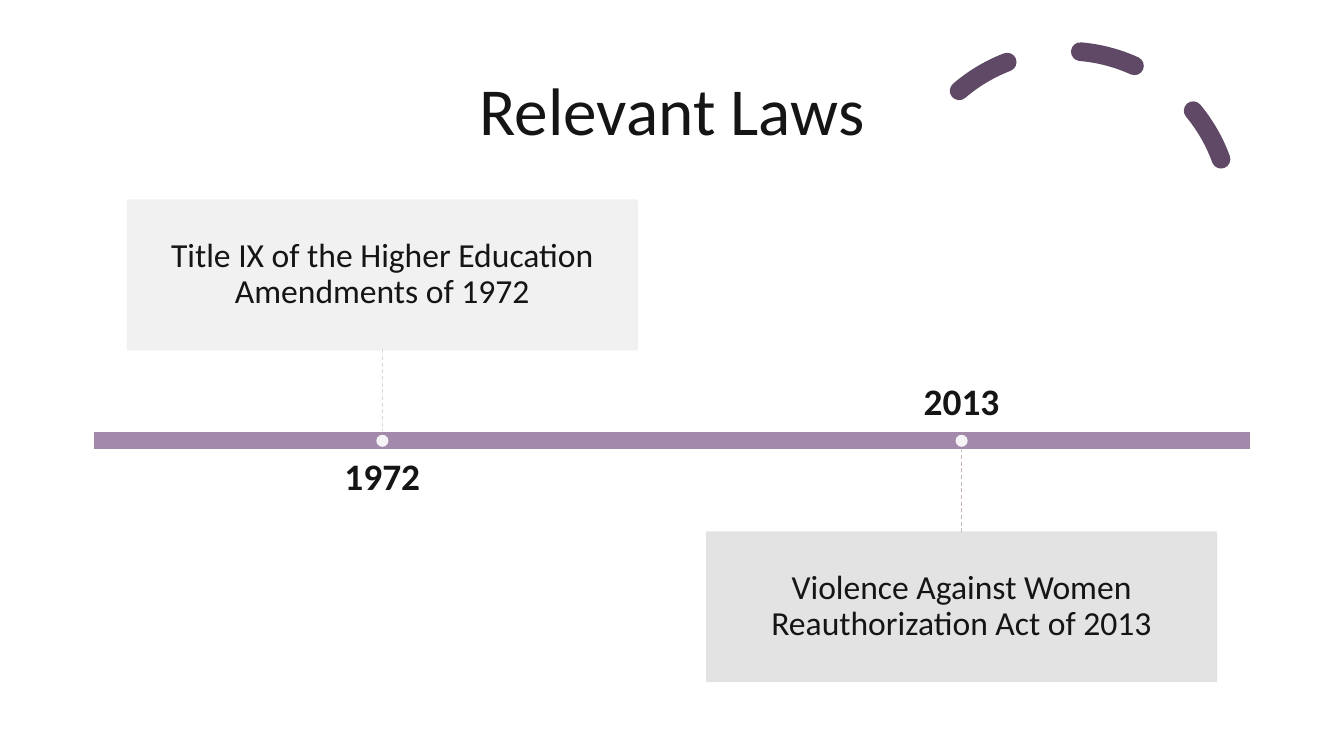
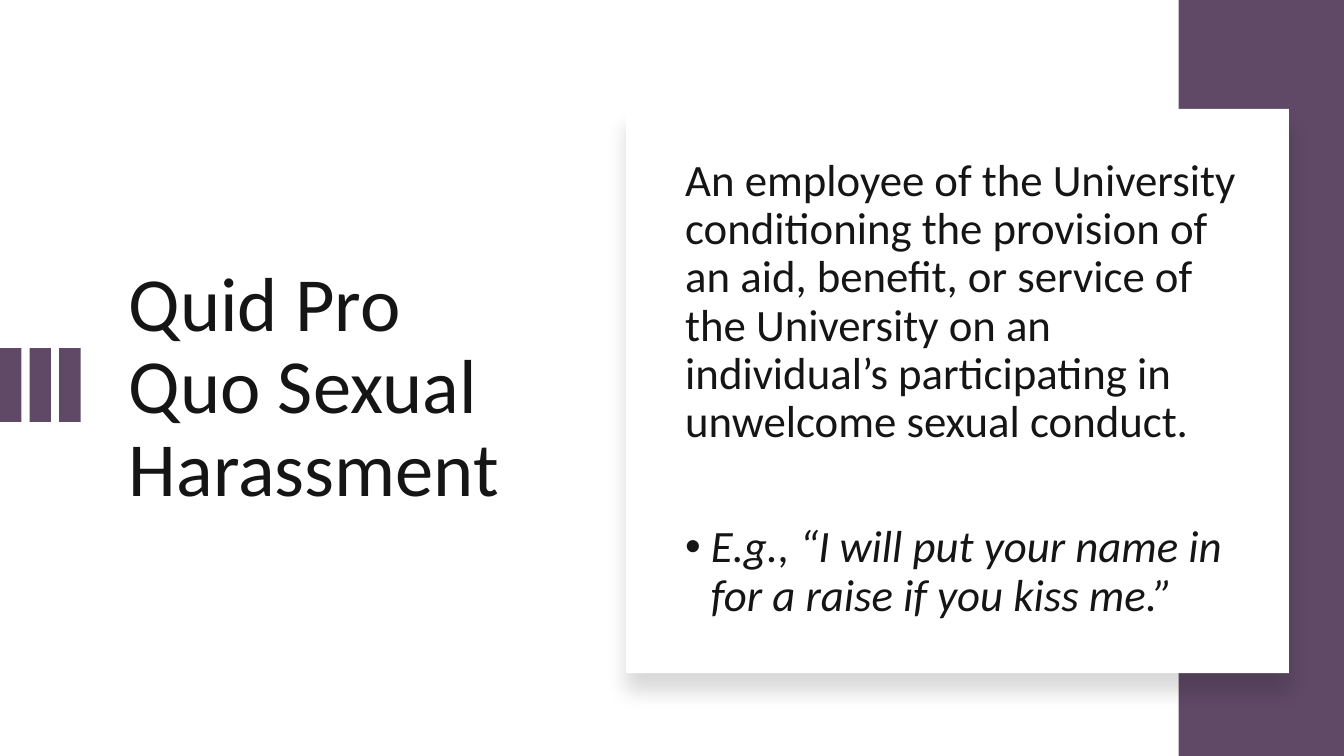
from dataclasses import dataclass

from pptx import Presentation
from pptx.dml.color import RGBColor
from pptx.enum.dml import MSO_LINE as DASH
from pptx.enum.shapes import MSO_CONNECTOR as CONN, MSO_SHAPE as SHAPE
from pptx.enum.text import MSO_ANCHOR as ANCHOR, PP_ALIGN as ALIGN
from pptx.oxml.ns import qn
from pptx.oxml.xmlchemy import OxmlElement
from pptx.util import Inches, Pt


@dataclass(frozen=True)
class Theme:
    font: str = "Calibri"
    ink: str = "151515"
    white: str = "FFFFFF"
    plum: str = "5F4966"
    mauve: str = "A38AAB"
    title: float = 36
    side_title: float = 41
    body: float = 24
    year: float = 20
    card: float = 18


T = Theme()
WIDTH = 10
HEIGHT = WIDTH * 9 / 16


def rgb(color):
    return RGBColor.from_string(color)


def child(parent, tag, **attrs):
    """Append an XML element with the given attributes."""
    el = OxmlElement(tag)
    for name, value in attrs.items():
        el.set(name, str(value))
    parent.append(el)
    return el


def set_alpha(sp, percent):
    """Give the solid fill and line colours of a shape an opacity."""
    for color in sp._element.spPr.iter(qn("a:srgbClr")):
        child(color, "a:alpha", val=percent * 1000)


def add_block(s, kind, box, fill=None, line=None, width=1, alpha=None):
    """Preset shape without shadow; no fill or line unless given."""
    sp = s.shapes.add_shape(kind, *map(Inches, box))
    sp.shadow.inherit = False
    if fill:
        sp.fill.solid()
        sp.fill.fore_color.rgb = rgb(fill)
    else:
        sp.fill.background()
    if line:
        sp.line.color.rgb = rgb(line)
        sp.line.width = Pt(width)
    else:
        sp.line.fill.background()
    if alpha:
        set_alpha(sp, alpha)
    return sp


def add_soft_shadow(sp, percent, blur, dist):
    """Shadow that falls straight down."""
    effects = sp._element.spPr.find(qn("a:effectLst"))
    shadow = child(effects, "a:outerShdw", blurRad=Pt(blur), dist=Pt(dist),
                   dir=90 * 60000, algn="t", rotWithShape=0)
    color = child(shadow, "a:srgbClr", val="000000")
    child(color, "a:alpha", val=percent * 1000)


def write(tf, text, size, bold=False, italic=False, align=ALIGN.LEFT,
          anchor=ANCHOR.MIDDLE, inset=(0.1, 0.05), before=0, bullet=None):
    """Write one paragraph; a frame that already has text gets another."""
    tf.word_wrap = True
    tf.vertical_anchor = anchor
    tf.margin_left = tf.margin_right = Inches(inset[0])
    tf.margin_top = tf.margin_bottom = Inches(inset[1])
    p = tf.add_paragraph() if tf.text else tf.paragraphs[0]
    p.alignment = align
    p.line_spacing = 0.9
    p.space_before = Pt(before)
    if bullet:
        pPr = p._p.get_or_add_pPr()
        pPr.set("marL", str(Inches(0.19)))
        pPr.set("indent", str(-Inches(0.19)))
        child(pPr, "a:buFont", typeface="Arial")
        child(pPr, "a:buChar", char=bullet)
    r = p.add_run()
    r.text = text
    f = r.font
    f.name, f.size, f.bold, f.italic = T.font, Pt(size), bold, italic
    f.color.rgb = rgb(T.ink)


def add_text(s, box, text, size, **fmt):
    tf = s.shapes.add_textbox(*map(Inches, box)).text_frame
    write(tf, text, size, **fmt)
    return tf


def add_stem(s, card, site, x, y, color):
    """Dashed line from a card's side to the point x, y on the time bar."""
    ln = s.shapes.add_connector(CONN.STRAIGHT, 0, 0, Inches(x), Inches(y))
    ln.begin_connect(card, site)
    ln.line.color.rgb = rgb(color)
    ln.line.width = Pt(0.5)
    ln.line.dash_style = DASH.DASH
    child(ln._element.spPr, "a:effectLst")


def add_dashed_arc(s):
    arc = add_block(s, SHAPE.ARC, (6.71, 0.38, 2.45, 2.45),
                    line=T.plum, width=10)
    arc.adjustments[0] = 146.13
    arc.adjustments[1] = 0
    arc.rotation = 345.8
    arc.line.dash_style = DASH.DASH
    arc._element.spPr.find(qn("a:ln")).set("cap", "rnd")


def laws_slide(s):
    add_dashed_arc(s)
    add_text(s, (0.69, 0.3, 8.62, 1.09), "Relevant Laws", T.title,
             align=ALIGN.CENTER)

    # Time bar, with the events in the middle of its two halves
    left, top, width, height = bar = (0.69, 3.21, 8.62, 0.14)
    add_block(s, SHAPE.RECTANGLE, bar, T.mauve, T.white)
    card_w, card_h, stem, year_w, year_h, dot = 3.79, 1.11, 0.61, 3.45, 0.4, 0.09
    events = [
        ("1972", "Title IX of the Higher Education Amendments of 1972",
         "F0F0F0", "D8D8D8", True),
        ("2013", "Violence Against Women Reauthorization Act of 2013",
         "E1E1E1", "C6B5B5", False),
    ]
    for i, (year, law, fill, stem_color, above) in enumerate(events):
        x = left + width * (2 * i + 1) / 4
        bottom = top + height
        if above:
            edge, site, anchor = top, 2, ANCHOR.TOP
            card_y, year_y = top - stem - card_h, bottom + 0.06
        else:
            edge, site, anchor = bottom, 0, ANCHOR.BOTTOM
            card_y, year_y = bottom + stem, top - 0.06 - year_h
        add_text(s, (x - year_w / 2, year_y, year_w, year_h), year, T.year,
                 bold=True, align=ALIGN.CENTER, anchor=anchor, inset=(0, 0))
        card = add_block(s, SHAPE.RECTANGLE,
                         (x - card_w / 2, card_y, card_w, card_h),
                         fill, fill, alpha=90)
        write(card.text_frame, law, T.card, align=ALIGN.CENTER,
              inset=(0.11, 0.11))
        add_stem(s, card, site, x, edge, stem_color)
        add_block(s, SHAPE.OVAL,
                  (x - dot / 2, top + (height - dot) / 2, dot, dot),
                  T.white, alpha=90)


def quid_pro_quo_slide(s):
    add_text(s, (0.86, 1.1, 3.19, 3.59), "Quid Pro Quo Sexual Harassment",
             T.side_title)

    # Three ticks at the left edge and the band at the right
    for i in range(3):
        add_block(s, SHAPE.RECTANGLE, (0.22 * i, 2.59, 0.16, 0.55), T.plum)
    add_block(s, SHAPE.RECTANGLE, (8.77, 0, 1.23, HEIGHT), T.plum)

    # Raised panel with the definition
    panel = add_block(s, SHAPE.RECTANGLE, (4.66, 0.81, 4.93, 4.2), T.white)
    add_soft_shadow(panel, percent=15, blur=11, dist=10)
    tf = add_text(s, (5, 1.1, 4.32, 3.59),
                  "An employee of the University conditioning the provision "
                  "of an aid, benefit, or service of the University on an "
                  "individual’s participating in unwelcome sexual conduct.",
                  T.body, before=7.5)
    write(tf, "E.g., “I will put your name in for a raise if you kiss me.”",
          T.body, italic=True, before=41, bullet="•")


def main():
    prs = Presentation()
    prs.slide_width, prs.slide_height = Inches(WIDTH), Inches(HEIGHT)
    for build in (laws_slide, quid_pro_quo_slide):
        build(prs.slides.add_slide(prs.slide_layouts[6]))
    prs.save("out.pptx")


if __name__ == "__main__":
    main()
